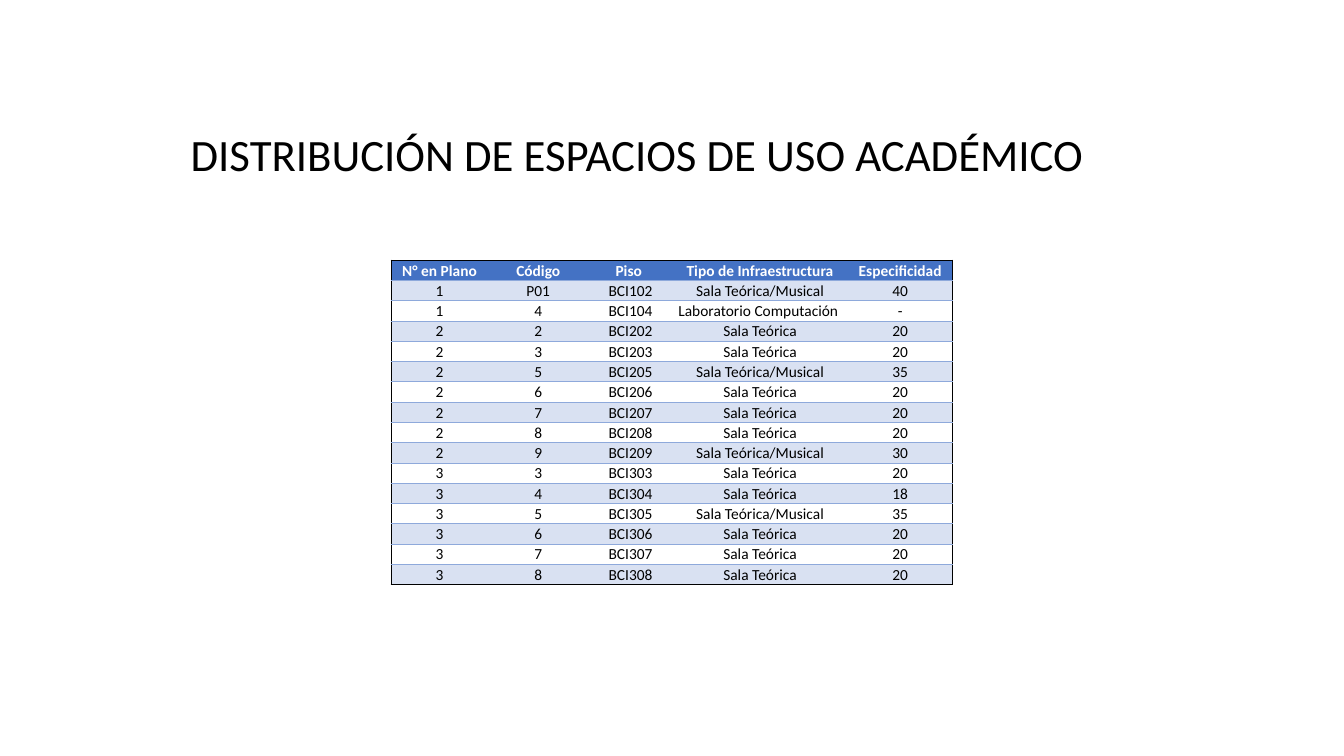
from lxml.etree import SubElement
from pptx import Presentation
from pptx.dml.color import RGBColor
from pptx.enum.text import MSO_ANCHOR, MSO_AUTO_SIZE, PP_ALIGN
from pptx.oxml.ns import qn
from pptx.util import Pt

TITLE = "DISTRIBUCIÓN DE ESPACIOS DE USO ACADÉMICO"
HEADERS = ("N° en Plano", "Código", "Piso ", "Tipo de Infraestructura", "Especificidad")
THEORY, MUSIC, COMPUTING = "Sala Teórica", "Sala Teórica/Musical", "Laboratorio Computación "
ROOMS = [
    ("1", "P01", "BCI102", MUSIC, "40"),
    ("1", "4", "BCI104", COMPUTING, "-"),
    ("2", "2", "BCI202", THEORY, "20"),
    ("2", "3", "BCI203", THEORY, "20"),
    ("2", "5", "BCI205", MUSIC, "35"),
    ("2", "6", "BCI206", THEORY, "20"),
    ("2", "7", "BCI207", THEORY, "20"),
    ("2", "8", "BCI208", THEORY, "20"),
    ("2", "9", "BCI209", MUSIC, "30"),
    ("3", "3", "BCI303", THEORY, "20"),
    ("3", "4", "BCI304", THEORY, "18"),
    ("3", "5", "BCI305", MUSIC, "35"),
    ("3", "6", "BCI306", THEORY, "20"),
    ("3", "7", "BCI307", THEORY, "20"),
    ("3", "8", "BCI308", THEORY, "20"),
]

BLACK = RGBColor(0x00, 0x00, 0x00)
WHITE = RGBColor(0xFF, 0xFF, 0xFF)
HEADER_BLUE = RGBColor(0x44, 0x72, 0xC4)
BAND_BLUE = RGBColor(0xD9, 0xE1, 0xF2)
RULE_BLUE = RGBColor(0x8E, 0xA9, 0xDB)

FONT = "Calibri"
TABLE_LEFT, TABLE_TOP = 279.5, 185.8
COLUMN_WIDTHS = (69, 72, 59.8, 125.3, 75)
ROW_HEIGHT = 14.5
OUTLINE, RULE = (BLACK, 1), (RULE_BLUE, 0.5)
CELL_FORMAT = {
    "vertical_anchor": MSO_ANCHOR.MIDDLE,
    "margin_left": Pt(0.7), "margin_right": Pt(0.7),
    "margin_top": Pt(0.7), "margin_bottom": Pt(0),
}
TITLE_BOX = {"left": Pt(129), "top": Pt(84.2), "width": Pt(702.7), "height": Pt(46.8)}
TITLE_FRAME = {"word_wrap": True, "vertical_anchor": MSO_ANCHOR.TOP,
               "auto_size": MSO_AUTO_SIZE.SHAPE_TO_FIT_TEXT}
TITLE_PARAGRAPH = {"alignment": PP_ALIGN.LEFT, "line_spacing": 1.07,
                   "space_before": Pt(0), "space_after": Pt(8)}


def set_all(target, values):
    for name, value in values.items():
        setattr(target, name, value)


def set_font(font, size, color, bold=False):
    set_all(font, {"name": FONT, "size": Pt(size), "bold": bold})
    font.color.rgb = color


def add_border(cell, side, line):
    """Draw one cell edge from a (colour, width) pair; None hides the edge."""
    properties = cell._tc.get_or_add_tcPr()
    border = SubElement(properties, qn(f"a:ln{side}"))
    if line is None:
        border.set("w", "0")
        SubElement(border, qn("a:noFill"))
        return
    color, width = line
    border.set("w", str(Pt(width)))
    fill = SubElement(border, qn("a:solidFill"))
    SubElement(fill, qn("a:srgbClr")).set("val", str(color))


def add_title(slide):
    title = slide.shapes.title
    set_all(title, TITLE_BOX)
    set_all(title.text_frame, TITLE_FRAME)
    title.text_frame.text = TITLE
    paragraph = title.text_frame.paragraphs[0]
    set_all(paragraph, TITLE_PARAGRAPH)
    set_font(paragraph.runs[0].font, 32, BLACK)


def add_room_table(slide):
    rows = [HEADERS, *ROOMS]
    last_row, last_column = len(rows) - 1, len(HEADERS) - 1
    table = slide.shapes.add_table(
        len(rows), len(HEADERS), Pt(TABLE_LEFT), Pt(TABLE_TOP),
        Pt(sum(COLUMN_WIDTHS)), Pt(ROW_HEIGHT * len(rows))).table
    table.horz_banding = False
    for column, width in zip(table.columns, COLUMN_WIDTHS):
        column.width = Pt(width)

    for r, values in enumerate(rows):
        table.rows[r].height = Pt(ROW_HEIGHT)
        is_header = r == 0
        for c, text in enumerate(values):
            cell = table.cell(r, c)
            set_all(cell, CELL_FORMAT)
            add_border(cell, "L", OUTLINE if c == 0 else None)
            add_border(cell, "R", OUTLINE if c == last_column else None)
            add_border(cell, "T", OUTLINE if is_header else RULE)
            add_border(cell, "B", OUTLINE if r == last_row else RULE)
            if r % 2 or is_header:
                cell.fill.solid()
                cell.fill.fore_color.rgb = HEADER_BLUE if is_header else BAND_BLUE
            else:
                cell.fill.background()
            cell.text = text
            paragraph = cell.text_frame.paragraphs[0]
            paragraph.alignment = PP_ALIGN.CENTER
            set_font(paragraph.runs[0].font, 11, WHITE if is_header else BLACK, is_header)


def main():
    presentation = Presentation()
    presentation.slide_width, presentation.slide_height = Pt(960), Pt(540)
    slide = presentation.slides.add_slide(presentation.slide_layouts[5])
    add_title(slide)
    add_room_table(slide)
    presentation.save("out.pptx")


if __name__ == "__main__":
    main()
